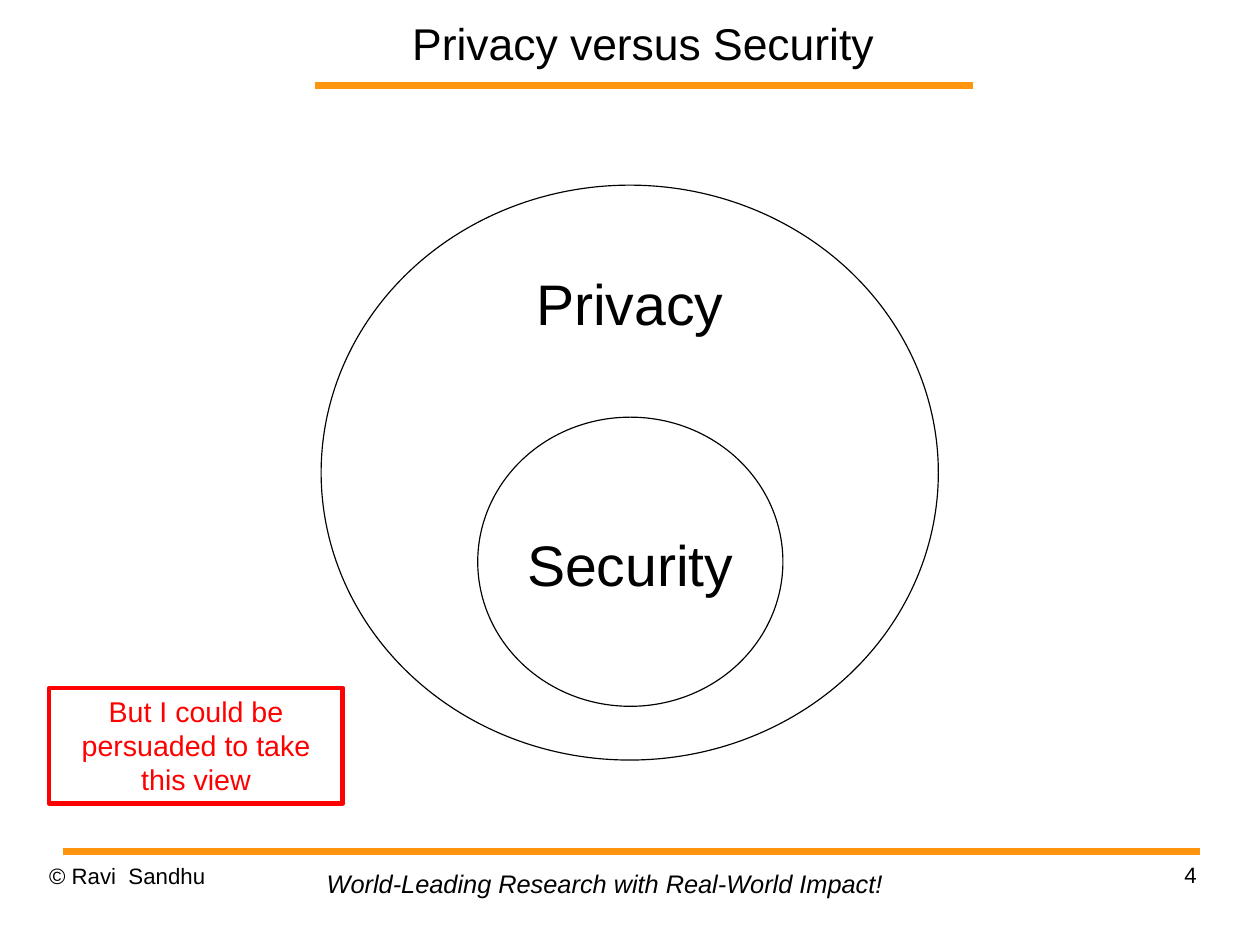
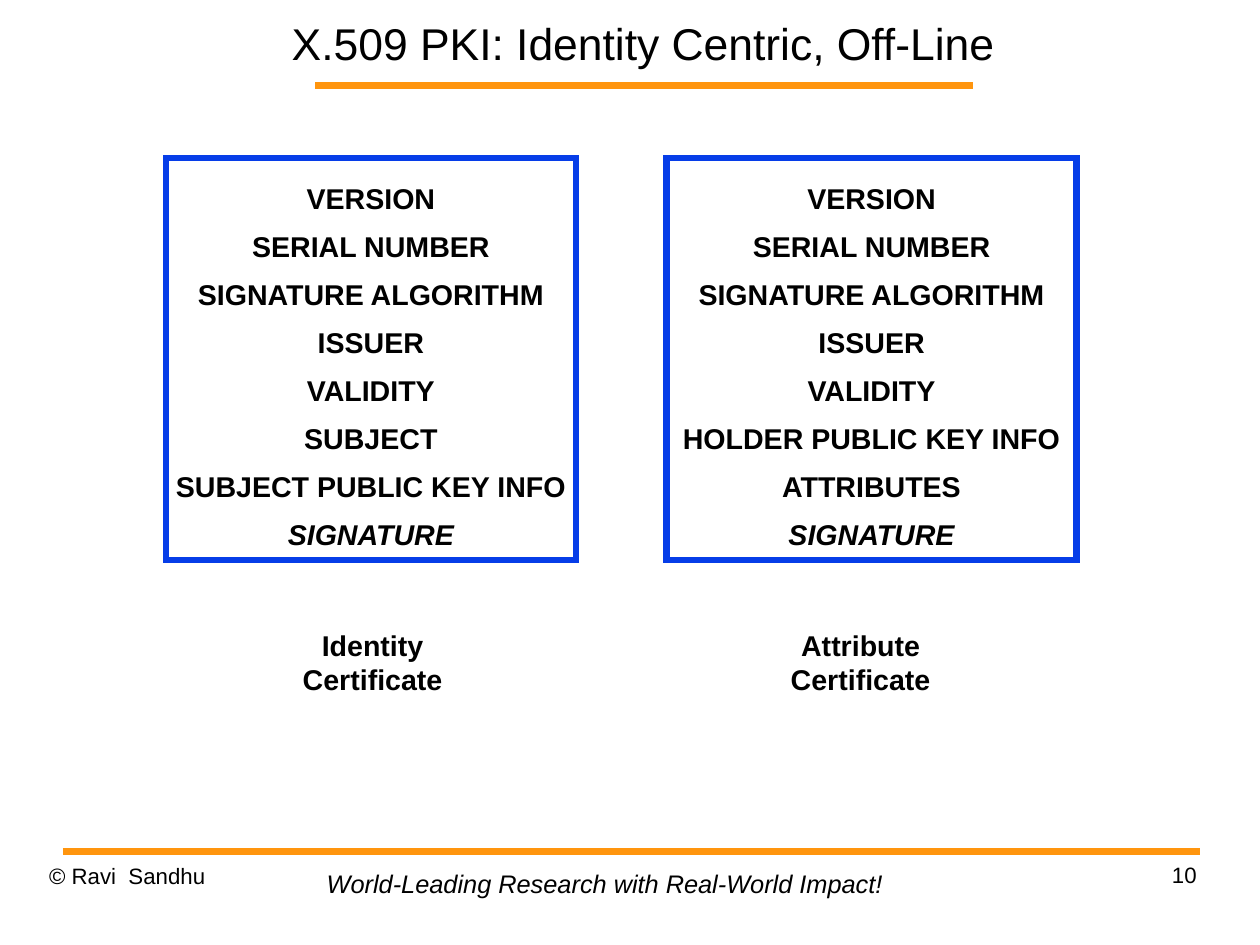
import pptx
import pptx.util
import pptx.dml.color
import pptx.enum.shapes
import pptx.enum.text
import pptx.oxml.ns
import lxml.etree

Inches = pptx.util.Inches
Shapes = pptx.enum.shapes.MSO_SHAPE
Align = pptx.enum.text.PP_ALIGN
Anchor = pptx.enum.text.MSO_ANCHOR

CM_PER_INCH = 2.54
SLIDE_SIZE_CM = (28, 21)
FONT = "Arial"
COLORS = {
    "text": "000000",
    "paper": "FFFFFF",
    "rule": "FF950E",
    "note": "FF0000",
    "certificate": "063DE8",
}
PADDING = (0.1, 0.05, 0.1, 0.05)
NO_PADDING = (0, 0, 0, 0)

COPYRIGHT = "© Ravi  Sandhu"
MOTTO = "World-Leading Research with Real-World Impact!"
RULES = [(2.76, 8.51, 0.75), (0.55, 10.5, 7.45)]

VENN_TITLE = "Privacy versus Security"
VENN_CIRCLES = [(2.81, 1.62, 5.4, 5.03), (4.18, 3.65, 2.67, 2.53)]
VENN_LABELS = [("Privacy", (4.58, 2.3, 1.86, 0.71)), ("Security", (4.5, 4.58, 2.03, 0.71))]
VENN_NOTE = "But I could be persuaded to take this view"

PKI_TITLE = "X.509 PKI: Identity Centric, Off-Line"
COMMON_FIELDS = ["VERSION", "SERIAL NUMBER", "SIGNATURE ALGORITHM", "ISSUER", "VALIDITY"]
SIGNATURE = "SIGNATURE"
CERTIFICATES = [
    ("Identity", ["SUBJECT", "SUBJECT PUBLIC KEY INFO"], 1.45, 2.54),
    ("Attribute", ["HOLDER PUBLIC KEY INFO", "ATTRIBUTES"], 5.83, 6.81),
]


def color(name):
    return pptx.dml.color.RGBColor.from_string(COLORS[name])


def add_element(parent, tag, **attributes):
    return lxml.etree.SubElement(parent, pptx.oxml.ns.qn(tag), **attributes)


def write(shape, lines, size, ink="text", align=Align.CENTER, anchor=Anchor.TOP,
          padding=PADDING, wrap=True, bold=False, italic=(), spacing=None):
    frame = shape.text_frame
    frame.word_wrap = wrap
    frame.vertical_anchor = anchor
    (frame.margin_left, frame.margin_top,
     frame.margin_right, frame.margin_bottom) = map(Inches, padding)
    for index, line in enumerate(lines):
        paragraph = frame.add_paragraph() if index else frame.paragraphs[0]
        paragraph.alignment = align
        if spacing:
            paragraph.line_spacing = spacing
        run = paragraph.add_run()
        run.text = line
        run.font.name = FONT
        run.font.size = pptx.util.Pt(size)
        run.font.bold = bold
        run.font.italic = line in italic
        run.font.color.rgb = color(ink)


def add_text(slide, box, lines, size, **style):
    write(slide.shapes.add_textbox(*map(Inches, box)), lines, size, **style)


def add_outline(slide, kind, box, line, width, fill=None):
    shape = slide.shapes.add_shape(kind, *map(Inches, box))
    shape.shadow.inherit = False
    if fill:
        shape.fill.solid()
        shape.fill.fore_color.rgb = color(fill)
    else:
        shape.fill.background()
    shape.line.color.rgb = color(line)
    shape.line.width = pptx.util.Pt(width)
    return shape


def add_rule(slide, left, right, top):
    rule = slide.shapes.add_connector(
        pptx.enum.shapes.MSO_CONNECTOR.STRAIGHT,
        Inches(left), Inches(top), Inches(right), Inches(top))
    rule.line.color.rgb = color("rule")
    rule.line.width = pptx.util.Pt(4.31)
    add_element(rule.element.spPr, "a:effectLst")


def add_framed_slide(presentation, title, number):
    slide = presentation.slides.add_slide(presentation.slide_layouts[6])
    for rule in RULES:
        add_rule(slide, *rule)
    add_text(slide, (0.43, 7.54, 2.57, 0.57), [COPYRIGHT], 14,
             align=Align.LEFT, padding=NO_PADDING, spacing=1.01)
    add_text(slide, (7.9, 7.53, 2.57, 0.57), [str(number)], 14,
             align=Align.RIGHT, padding=NO_PADDING, spacing=1.01)
    add_text(slide, (2.76, 7.55, 5.08, 0.37), [MOTTO], 16,
             align=Align.LEFT, wrap=False, italic=[MOTTO])
    add_text(slide, (2.41, 0, 6.43, 0.75), [title], 28,
             anchor=Anchor.MIDDLE, padding=NO_PADDING)
    return slide


def build_venn(presentation):
    slide = add_framed_slide(presentation, VENN_TITLE, 4)
    for circle in VENN_CIRCLES:
        add_outline(slide, Shapes.OVAL, circle, "text", 0.75, "paper")
    for label, box in VENN_LABELS:
        add_text(slide, box, [label], 36, wrap=False)
    note = add_outline(slide, Shapes.RECTANGLE, (0.43, 6.02, 2.57, 1.01), "note", 3)
    write(note, [VENN_NOTE], 18, ink="note")


def build_certificates(presentation):
    slide = add_framed_slide(presentation, PKI_TITLE, 10)
    for name, fields, card_left, caption_left in CERTIFICATES:
        card = add_outline(slide, Shapes.RECTANGLE, (card_left, 1.38, 3.59, 3.52),
                           "certificate", 4)
        outline = card.element.spPr.find(pptx.oxml.ns.qn("a:ln"))
        add_element(outline, "a:miter", lim="800000")
        write(card, COMMON_FIELDS + fields + [SIGNATURE], 18, anchor=Anchor.MIDDLE,
              padding=(0.11, 0.05, 0.11, 0.05), wrap=False, bold=True,
              italic=[SIGNATURE], spacing=1.4)
        add_text(slide, (caption_left, 5.44, 1.44, 0.71), [name, "Certificate"], 18,
                 wrap=False, bold=True)


def main():
    presentation = pptx.Presentation()
    presentation.slide_width, presentation.slide_height = (
        Inches(length / CM_PER_INCH) for length in SLIDE_SIZE_CM)
    build_venn(presentation)
    build_certificates(presentation)
    presentation.save("out.pptx")


if __name__ == "__main__":
    main()
